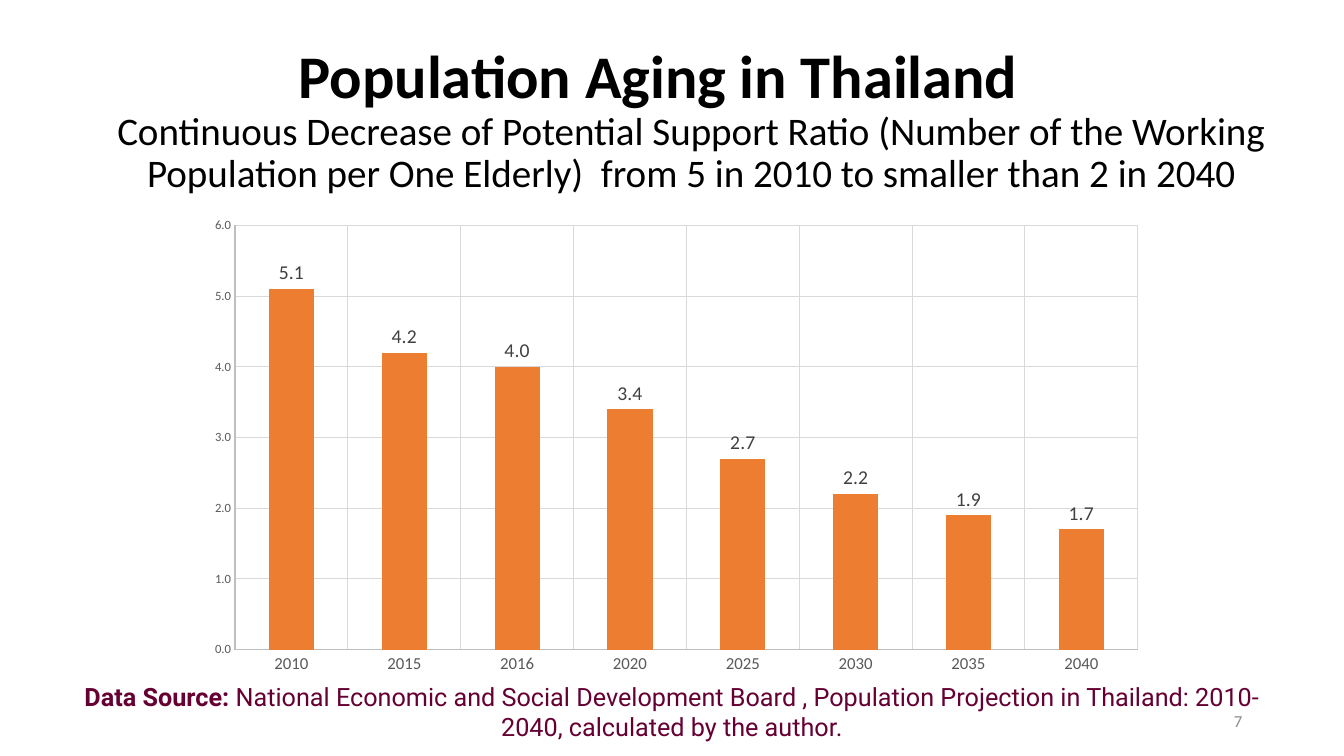
from dataclasses import dataclass

from lxml import etree
from pptx import Presentation, util as u
from pptx.chart import data as chart_data
from pptx.dml import color
from pptx.enum import chart as charts, text
from pptx.oxml import ns

COLORS = {
    "title": "000000",
    "source": "660033",
    "number": "8C8C8C",
    "bar": "ED7D31",
    "axis_text": "595959",
    "label": "404040",
    "axis_line": "BFBFBF",
    "grid": "D9D9D9",
}
RATIOS = {
    "2010": 5.1, "2015": 4.2, "2016": 4.0, "2020": 3.4,
    "2025": 2.7, "2030": 2.2, "2035": 1.9, "2040": 1.7,
}
PLOT_AREA = {"x": 0.055, "y": 0.048, "w": 0.945, "h": 0.892}


@dataclass
class Span:
    words: str
    size: float
    font: str
    color: str
    bold: bool = False


@dataclass
class Area:
    left: float
    top: float
    width: float
    height: float

    def lengths(self) -> list:
        return [u.Inches(side) for side in (self.left, self.top, self.width, self.height)]


@dataclass
class Caption:
    area: Area
    align: text.PP_ALIGN
    spans: list[Span]


TITLE = Caption(Area(0.47, 0.45, 12.39, 1.5), text.PP_ALIGN.CENTER, [
    Span("Population Aging in Thailand  \v", 43.2, "Calibri", "title", True),
    Span("Continuous Decrease of Potential Support Ratio (Number of the Working "
         "Population per One Elderly)  from 5 in 2010 to smaller than 2 in 2040",
         27.9, "Calibri", "title"),
])
NOTES = [
    Caption(Area(0.47, 6.82, 12.39, 0.47), text.PP_ALIGN.CENTER, [
        Span("Data Source: ", 18, "Roboto", "source", True),
        Span("National Economic and Social Development Board , Population Projection "
             "in Thailand: 2010-2040, calculated by the author.", 18, "Roboto", "source"),
    ]),
    Caption(Area(9.42, 6.95, 3, 0.4), text.PP_ALIGN.RIGHT,
            [Span("7", 12, "Calibri", "number")]),
]


def rgb(name: str) -> color.RGBColor:
    return color.RGBColor.from_string(COLORS[name])


def style_font(font, size: float, name: str, tint: str, bold: bool = False) -> None:
    font.size = u.Pt(size)
    font.name = name
    font.bold = bold
    font.color.rgb = rgb(tint)


def fill_caption(box, caption: Caption) -> None:
    box.left, box.top, box.width, box.height = caption.area.lengths()
    frame = box.text_frame
    frame.word_wrap = True
    frame.auto_size = text.MSO_AUTO_SIZE.NONE
    frame.vertical_anchor = text.MSO_ANCHOR.MIDDLE
    para = frame.paragraphs[0]
    para.alignment = caption.align
    for span in caption.spans:
        run = para.add_run()
        run.text = span.words.rstrip("\v")
        style_font(run.font, span.size, span.font, span.color, span.bold)
        if span.words.endswith("\v"):
            para.add_line_break()


def add_title(page) -> None:
    box = page.shapes.title
    fill_caption(box, TITLE)
    para = box.text_frame.paragraphs[0]
    para.line_spacing = 0.9
    para.space_before = u.Pt(8)
    properties = para._p.get_or_add_pPr()
    properties.set("marL", str(u.Inches(0.38)))
    properties.set("indent", str(u.Inches(-0.38)))


def style_line(line, tint: str) -> None:
    line.color.rgb = rgb(tint)
    line.width = u.Pt(0.75)


def style_axis(axis, size: float) -> None:
    axis.has_major_gridlines = True
    axis.major_tick_mark = charts.XL_TICK_MARK.NONE
    axis.minor_tick_mark = charts.XL_TICK_MARK.NONE
    style_line(axis.format.line, "axis_line")
    style_line(axis.major_gridlines.format.line, "grid")
    style_font(axis.tick_labels.font, size, "Calibri", "axis_text")


def place_plot(chart) -> None:
    plot_area = chart._chartSpace.chart.plotArea
    for layout in plot_area.findall(ns.qn("c:layout")):
        plot_area.remove(layout)
    layout = etree.Element(ns.qn("c:layout"))
    manual = etree.SubElement(layout, ns.qn("c:manualLayout"))
    settings = {"layoutTarget": "inner", "xMode": "edge", "yMode": "edge", **PLOT_AREA}
    for name, value in settings.items():
        etree.SubElement(manual, ns.qn(f"c:{name}")).set("val", str(value))
    plot_area.insert(0, layout)


def add_ratio_chart(page) -> None:
    figures = chart_data.CategoryChartData(number_format="0.0")
    figures.categories = list(RATIOS)
    figures.add_series("Series 1", list(RATIOS.values()))
    chart = page.shapes.add_chart(
        charts.XL_CHART_TYPE.COLUMN_CLUSTERED,
        *Area(1.81, 2.01, 9.48, 4.72).lengths(), figures).chart
    chart.has_legend = False
    chart.has_title = False
    style_font(chart.font, 10, "Calibri", "title")
    style_axis(chart.category_axis, 12)
    style_axis(chart.value_axis, 9)
    chart.value_axis.minimum_scale = 0
    chart.value_axis.maximum_scale = 6
    chart.value_axis.major_unit = 1
    chart.value_axis.tick_labels.number_format = "0.0"
    chart.value_axis.tick_labels.number_format_is_linked = False

    plot = chart.plots[0]
    plot.gap_width = 150
    plot.vary_by_categories = False
    bars = plot.series[0]
    bars.format.fill.solid()
    bars.format.fill.fore_color.rgb = rgb("bar")
    labels = bars.data_labels
    labels.show_value = True
    labels.number_format = "0.0"
    labels.number_format_is_linked = False
    labels.position = charts.XL_LABEL_POSITION.OUTSIDE_END
    style_font(labels.font, 14, "Calibri", "label")
    place_plot(chart)


def main() -> None:
    deck = Presentation()
    deck.slide_width = u.Inches(13.33)
    deck.slide_height = u.Inches(7.5)
    page = deck.slides.add_slide(deck.slide_layouts.get_by_name("Title Only"))
    add_title(page)
    for note in NOTES:
        fill_caption(page.shapes.add_textbox(*note.area.lengths()), note)
    add_ratio_chart(page)
    deck.save("out.pptx")


if __name__ == "__main__":
    main()
